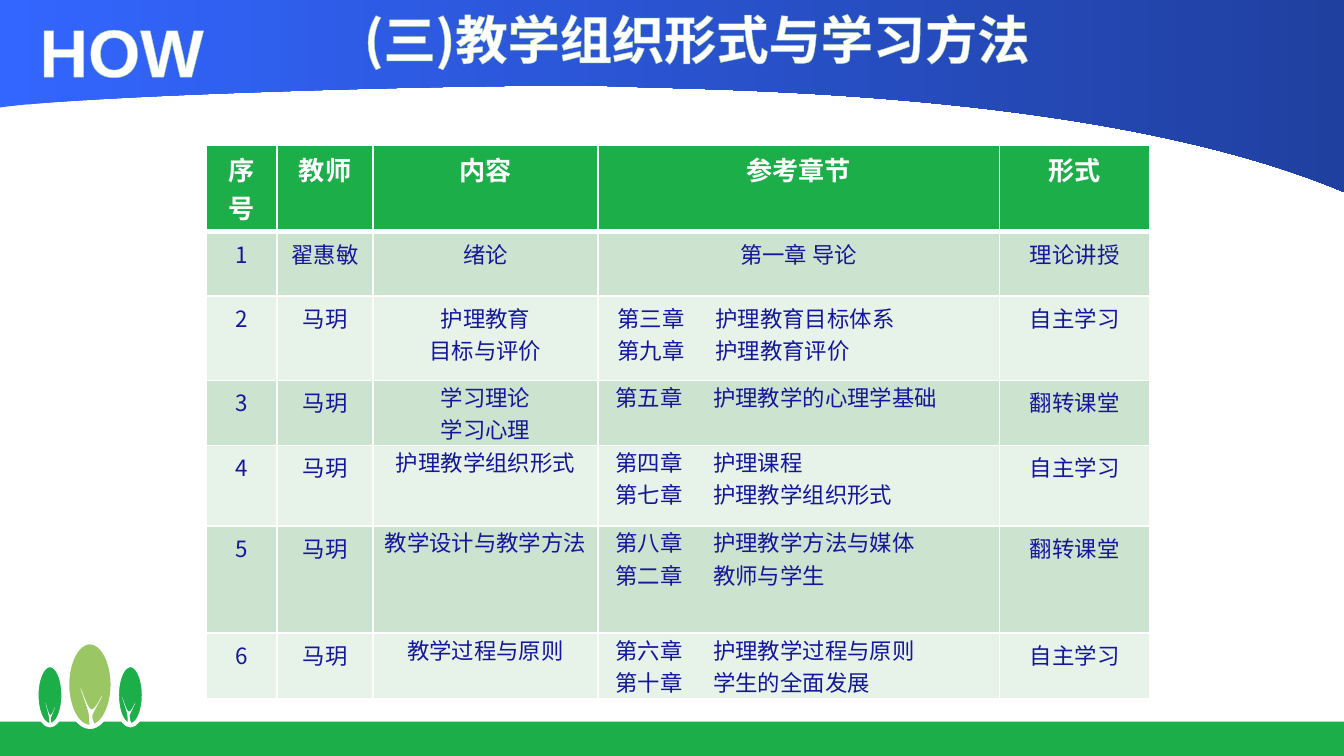
from dataclasses import dataclass

from lxml.etree import SubElement
from pptx import Presentation
from pptx.dml.color import RGBColor
from pptx.enum.shapes import MSO_SHAPE
from pptx.enum.text import MSO_ANCHOR, MSO_AUTO_SIZE, PP_ALIGN
from pptx.oxml.ns import qn
from pptx.util import Cm, Pt


@dataclass(frozen=True)
class Theme:
    sans: str = "Noto Sans CJK SC"
    latin: str = "Arial"
    white: str = "FFFFFF"
    green: str = "1CAE49"
    leaf: str = "9AC763"
    edge: str = "ABD3B1"
    ink: str = "14179C"
    dark: str = "CCE3CF"
    pale: str = "E7F2E9"
    sky: str = "3366FF"
    navy: str = "2040A0"
    title: int = 28
    mark: int = 36
    head: int = 14
    body: int = 12


@dataclass(frozen=True)
class Box:
    """A place on the slide, in centimetres."""
    x: float
    y: float
    w: float
    h: float

    def place(self) -> tuple:
        return Cm(self.x), Cm(self.y), Cm(self.w), Cm(self.h)


@dataclass(frozen=True)
class Tree:
    crown: Box
    trunk: Box
    tint: str


@dataclass(frozen=True)
class Lesson:
    tutor: str
    topic: str
    pages: str
    form: str
    high: float


T = Theme()
WIDE, HIGH = 25.4, 14.29
COLS = (1.34, 1.81, 4.25, 7.59, 2.84)
HEAD = ("序号", "教师", "内容", "参考章节", "形式")
HEAD_HIGH = 1.62
TAB = 1.85

LESSONS = (
    Lesson("翟惠敏", "绪论", "第一章 导论", "理论讲授", 1.21),
    Lesson("马玥", "护理教育\n目标与评价",
           "第三章\t护理教育目标体系\n第九章\t护理教育评价", "自主学习", 1.6),
    Lesson("马玥", "学习理论\n学习心理", "第五章\t护理教学的心理学基础", "翻转课堂", 1.23),
    Lesson("马玥", "护理教学组织形式",
           "第四章\t护理课程\n第七章\t护理教学组织形式", "自主学习", 1.52),
    Lesson("马玥", "教学设计与教学方法",
           "第八章\t护理教学方法与媒体\n第二章\t教师与学生", "翻转课堂", 2.03),
    Lesson("马玥", "教学过程与原则",
           "第六章\t护理教学过程与原则\n第十章\t学生的全面发展", "自主学习", 1.23),
)

TREES = (
    Tree(Box(0.69, 12.57, 0.51, 1.14), Box(0.86, 13.28, 0.18, 0.46), T.green),
    Tree(Box(1.27, 12.14, 0.86, 1.6), Box(1.52, 13, 0.41, 0.79), T.leaf),
    Tree(Box(2.21, 12.57, 0.51, 1.14), Box(2.31, 13.18, 0.25, 0.53), T.green),
)

# Outlines as Bezier points on a unit square: a start, then three per curve.
# Points left over after the last curve are corners.
WAVE = ((0, 0.56), (0.07, 0.49), (0.39, 0.43), (0.46, 0.45),
        (0.53, 0.47), (0.82, 0.47), (1, 1), (1, 0), (0, 0))
TRUNK = ((0, 0), (0, 0.03), (0.31, 0.45), (0.38, 0.61),
         (0.44, 0.74), (0.38, 0.9), (0.44, 0.97),
         (0.5, 1), (0.63, 0.97), (0.69, 0.94),
         (0.69, 0.87), (0.5, 0.77), (0.56, 0.65),
         (0.63, 0.55), (1, 0.23), (1, 0.19),
         (1, 0.16), (0.69, 0.55), (0.5, 0.52),
         (0.31, 0.48), (0.13, 0.13), (0, 0))


def color(code: str) -> RGBColor:
    return RGBColor.from_string(code)


def draw_form(slide, box: Box, knots: tuple):
    """Draw a freeform and bend each three of its lines into one curve."""
    spots = [(int(Cm(box.x + x * box.w)), int(Cm(box.y + y * box.h))) for x, y in knots]
    pen = slide.shapes.build_freeform(*spots[0], scale=1.0)
    pen.add_line_segments(spots[1:], close=True)
    form = pen.convert_to_shape()
    lines = list(form._element.iter(qn("a:lnTo")))
    for i in range(0, len(lines) - 2, 3):
        curve = lines[i].makeelement(qn("a:cubicBezTo"))
        lines[i].addprevious(curve)
        for line in lines[i:i + 3]:
            curve.append(line[0])
            line.getparent().remove(line)
    form.shadow.inherit = False
    form.line.fill.background()
    return form


def paint(shape, tint: str) -> None:
    shape.fill.solid()
    shape.fill.fore_color.rgb = color(tint)


def draw_shape(slide, kind: MSO_SHAPE, box: Box, tint: str, rim: float = 0) -> None:
    shape = slide.shapes.add_shape(kind, *box.place())
    shape.shadow.inherit = False
    paint(shape, tint)
    if rim:
        shape.line.color.rgb = color(T.white)
        shape.line.width = Pt(rim)
    else:
        shape.line.fill.background()


def draw_line(parent, tag: str, tint: str, width: float):
    line = SubElement(parent, qn(tag), w=str(Pt(width)))
    SubElement(SubElement(line, qn("a:solidFill")), qn("a:srgbClr"), val=tint)
    return line


def style(par, size: int, tint: str, bold: bool, face: str = T.sans):
    """Format a paragraph and return its font element."""
    font = par.font
    font.size, font.bold, font.name = Pt(size), bold, face
    font.color.rgb = color(tint)
    props = par._p.get_or_add_pPr().get_or_add_defRPr()
    SubElement(props, qn("a:ea"), typeface=face)
    return props


def fill_cell(cell, text: str, tint: str, head: bool, tight: bool) -> None:
    side, edge = (0.15, 0) if tight else (0.19, 0.1)
    tabbed = "\t" in text
    cell.margin_left = Cm(side + 0.18 * tabbed)
    cell.margin_right = Cm(side)
    cell.margin_top = cell.margin_bottom = Cm(edge)
    cell.text = text
    for par in cell.text_frame.paragraphs:
        par.alignment = PP_ALIGN.JUSTIFY if tabbed else PP_ALIGN.CENTER
        if tabbed:
            tabs = SubElement(par._p.get_or_add_pPr(), qn("a:tabLst"))
            SubElement(tabs, qn("a:tab"), pos=str(Cm(TAB)), algn="l")
        style(par, T.head if head else T.body, T.white if head else T.ink, head)
    props = cell._tc.get_or_add_tcPr()
    for tag in ("a:lnL", "a:lnR", "a:lnT", "a:lnB"):
        draw_line(props, tag, T.white, 3 if head and tag == "a:lnB" else 1)
    paint(cell, tint)


def draw_table(slide) -> None:
    rows = [HEAD] + [(str(n), x.tutor, x.topic, x.pages, x.form)
                     for n, x in enumerate(LESSONS, 1)]
    highs = [HEAD_HIGH] + [x.high for x in LESSONS]
    box = Box(3.9, 2.74, sum(COLS), sum(highs))
    grid = slide.shapes.add_table(len(rows), len(COLS), *box.place()).table
    for col, wide in zip(grid.columns, COLS):
        col.width = Cm(wide)
    for r, (row, high) in enumerate(zip(rows, highs)):
        grid.rows[r].height = Cm(high)
        tint = T.green if r == 0 else T.dark if r % 2 else T.pale
        for c, text in enumerate(row):
            fill_cell(grid.cell(r, c), text, tint, r == 0, r > 2 and c in (2, 3))


def set_banner(shape, box: Box, text: str, size: int, face: str) -> None:
    shape.left, shape.top, shape.width, shape.height = box.place()
    frame = shape.text_frame
    frame.text = text
    frame.word_wrap = True
    frame.auto_size = MSO_AUTO_SIZE.NONE
    frame.vertical_anchor = MSO_ANCHOR.MIDDLE
    par = frame.paragraphs[0]
    par.alignment = PP_ALIGN.CENTER
    props = style(par, size, T.white, True, face)
    props.insert(0, draw_line(props, "a:ln", T.edge, 0.8))


def main() -> None:
    deck = Presentation()
    deck.slide_width, deck.slide_height = Cm(WIDE), Cm(HIGH)
    slide = deck.slides.add_slide(deck.slide_layouts[5])

    wave = draw_form(slide, Box(0, 0, WIDE, 3.63), WAVE)
    wave.fill.gradient()
    wave.fill.gradient_angle = 0
    for stop, tint in zip(wave.fill.gradient_stops, (T.sky, T.navy)):
        stop.color.rgb = color(tint)

    draw_shape(slide, MSO_SHAPE.RECTANGLE, Box(0, 13.64, WIDE, 0.65), T.green)
    for tree in TREES:
        draw_shape(slide, MSO_SHAPE.OVAL, tree.crown, tree.tint, 2.25)
    for tree in TREES:
        paint(draw_form(slide, tree.trunk, TRUNK), T.white)

    draw_table(slide)
    mark = Box(0, 0.05, 4.6, 1.8)
    set_banner(slide.shapes.add_textbox(*mark.place()), mark, "HOW", T.mark, T.latin)
    title = slide.shapes.title
    set_banner(title, Box(5.89, 0, 14.55, 1.45), "(三)教学组织形式与学习方法", T.title, T.sans)
    slide.shapes._spTree.append(title._element)
    deck.save("out.pptx")


if __name__ == "__main__":
    main()
